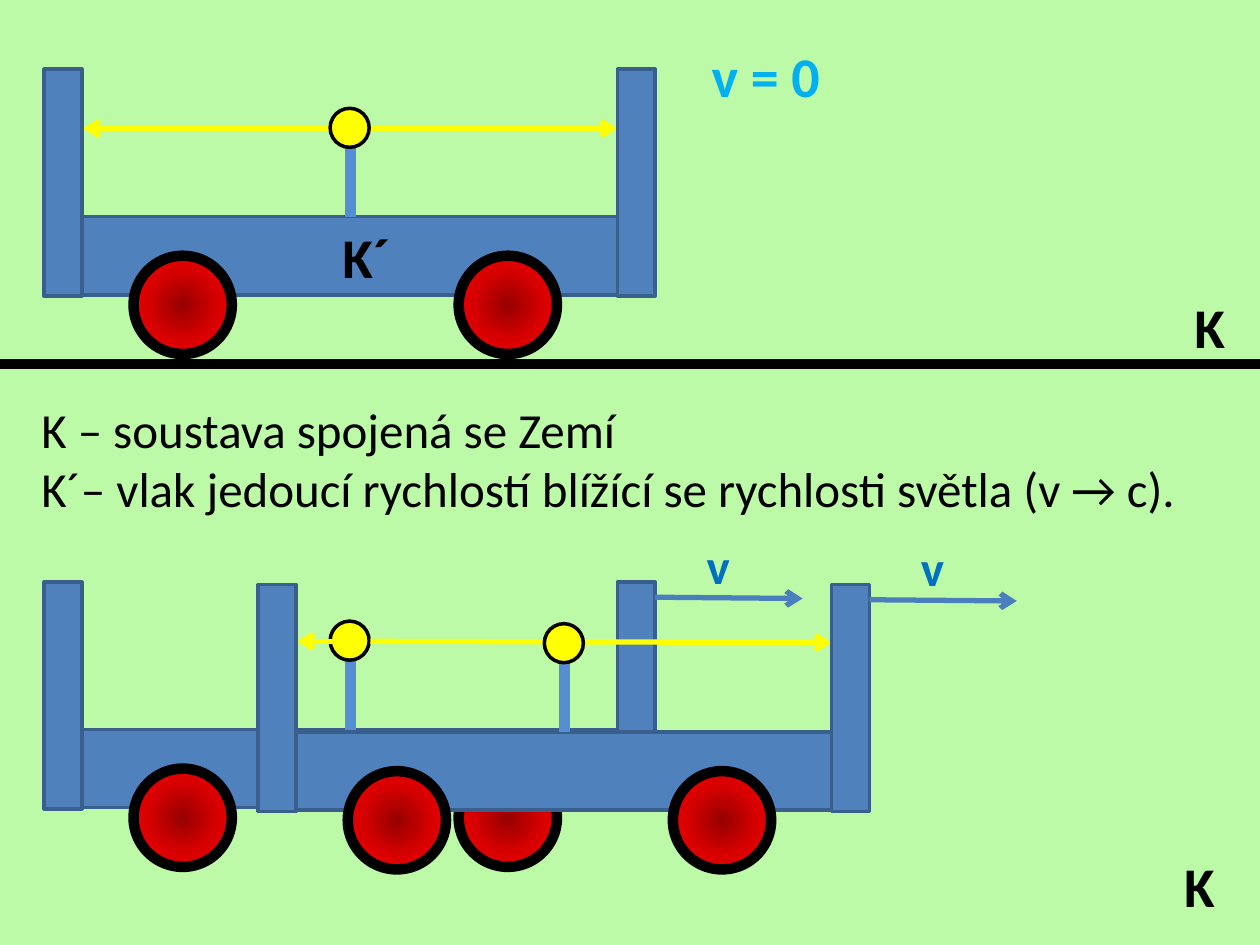
"""Build the slide comparing a resting and a moving light-clock wagon."""
from lxml.etree import SubElement
from pptx import Presentation
from pptx.dml.color import RGBColor
from pptx.enum.shapes import MSO_CONNECTOR as CONNECTOR, MSO_SHAPE as SHAPE
from pptx.enum.text import MSO_AUTO_SIZE as AUTO_SIZE
from pptx.oxml import parse_xml
from pptx.oxml.ns import nsdecls, qn
from pptx.util import Inches, Pt

GREEN = RGBColor(0xBD, 0xFA, 0xA8)
BLACK = RGBColor(0x00, 0x00, 0x00)
YELLOW = RGBColor(0xFF, 0xFF, 0x00)
BODY_BLUE = RGBColor(0x4F, 0x81, 0xBD)
EDGE_BLUE = RGBColor(0x3A, 0x5F, 0x8C)
POST_BLUE = RGBColor(0x55, 0x8E, 0xD5)
ARROW_BLUE = RGBColor(0x4B, 0x7E, 0xBC)
VELOCITY_BLUE = RGBColor(0x00, 0x70, 0xC0)
REST_BLUE = RGBColor(0x00, 0xB0, 0xF0)
WHEEL_GRADIENT = f"""<a:gradFill {nsdecls('a')} rotWithShape="1"><a:gsLst>
<a:gs pos="0"><a:srgbClr val="970000"/></a:gs>
<a:gs pos="50000"><a:srgbClr val="D70000"/></a:gs>
<a:gs pos="100000"><a:srgbClr val="FF0000"/></a:gs></a:gsLst>
<a:path path="circle"><a:fillToRect l="50000" t="50000" r="50000" b="50000"/></a:path>
</a:gradFill>"""


def add_line(shapes, start, end, color, width, arrow=False):
    line = shapes.add_connector(CONNECTOR.STRAIGHT, *map(Inches, start + end))
    line.line.color.rgb = color
    line.line.width = Pt(width)
    if arrow:
        SubElement(line.line._get_or_add_ln(), qn("a:tailEnd"), type="arrow")
    SubElement(line._element.spPr, qn("a:effectLst"))


def add_text(shapes, box, lines, size, color, bold=True, wrap=False):
    frame = shapes.add_textbox(*map(Inches, box)).text_frame
    frame.word_wrap = wrap
    frame.auto_size = AUTO_SIZE.NONE if wrap else AUTO_SIZE.SHAPE_TO_FIT_TEXT
    for index, line in enumerate(lines):
        paragraph = frame.add_paragraph() if index else frame.paragraphs[0]
        run = paragraph.add_run()
        run.text = line
        run.font.name = "Calibri"
        run.font.size = Pt(size)
        run.font.bold = bold
        run.font.color.rgb = color


prs = Presentation()
prs.slide_width, prs.slide_height = Inches(10), Inches(7.5)
slide = prs.slides.add_slide(prs.slide_layouts[6])
slide.background.fill.solid()
slide.background.fill.fore_color.rgb = GREEN

explanation = [
    "K – soustava spojená se Zemí",
    "K´– vlak jedoucí rychlostí blížící se rychlosti světla (v → c).",
]
add_text(slide.shapes, (0.23, 3.12, 9.53, 1), explanation, 28, BLACK, bold=False, wrap=True)
add_line(slide.shapes, (0, 2.89), (10, 2.89), BLACK, 6)
add_text(slide.shapes, (9.38, 2.27, 0.45, 0.64), ["K"], 32, BLACK)
add_text(slide.shapes, (9.3, 6.71, 0.45, 0.64), ["K"], 32, BLACK)
add_text(slide.shapes, (5.55, 0.28, 1.07, 0.64), ["v = 0"], 32, REST_BLUE)

wagon_parts = [
    (SHAPE.RECTANGLE, 0, 1.17, 4.84, 0.62, BODY_BLUE, EDGE_BLUE, 2),
    (SHAPE.RECTANGLE, 0, 0, 0.3, 1.8, BODY_BLUE, EDGE_BLUE, 2),
    (SHAPE.RECTANGLE, 4.55, 0, 0.3, 1.8, BODY_BLUE, EDGE_BLUE, 2),
    (SHAPE.OVAL, 0.71, 1.48, 0.78, 0.78, None, BLACK, 6),
    (SHAPE.OVAL, 3.29, 1.48, 0.78, 0.78, None, BLACK, 6),
    (SHAPE.OVAL, 2.27, 0.31, 0.31, 0.31, YELLOW, BLACK, 2),
]
wagons = [
    (0.35, 0.55, False, [((2.93, 1.02), (4.9, 1.02)), ((2.66, 1.02), (0.66, 1.02))]),
    (0.35, 4.62, True, []),
    (2.05, 4.64, True, [((2.94, 5.09), (6.6, 5.1)), ((2.67, 5.09), (2.36, 5.09))]),
]
for left, top, moving, beams in wagons:
    for start, end in beams:
        add_line(slide.shapes, start, end, YELLOW, 3, arrow=True)
    wagon = slide.shapes.add_group_shape().shapes
    add_line(wagon, (left + 2.43, top + 1.17), (left + 2.43, top + 0.62), POST_BLUE, 6)
    post = wagon[0]._element
    for kind, x, y, width, height, fill, edge, weight in wagon_parts:
        part = wagon.add_shape(kind, *map(Inches, (left + x, top + y, width, height)))
        part.shadow.inherit = False
        part.fill.solid()
        if fill is None:
            properties = part._element.spPr
            properties.replace(properties.find(qn("a:solidFill")), parse_xml(WHEEL_GRADIENT))
        else:
            part.fill.fore_color.rgb = fill
        part.line.color.rgb = edge
        part.line.width = Pt(weight)
    part._element.addprevious(post)
    if moving:
        add_line(wagon, (left + 4.85, top + 0.12), (left + 6.02, top + 0.13), ARROW_BLUE, 3, arrow=True)
        add_text(wagon, (left + 5.16, top - 0.42, 0.55, 0.57), ["v"], 28, VELOCITY_BLUE, wrap=True)
    else:
        add_text(wagon, (left + 2.27, top + 1.17, 0.6, 0.64), ["K´"], 32, BLACK)

prs.save("out.pptx")
